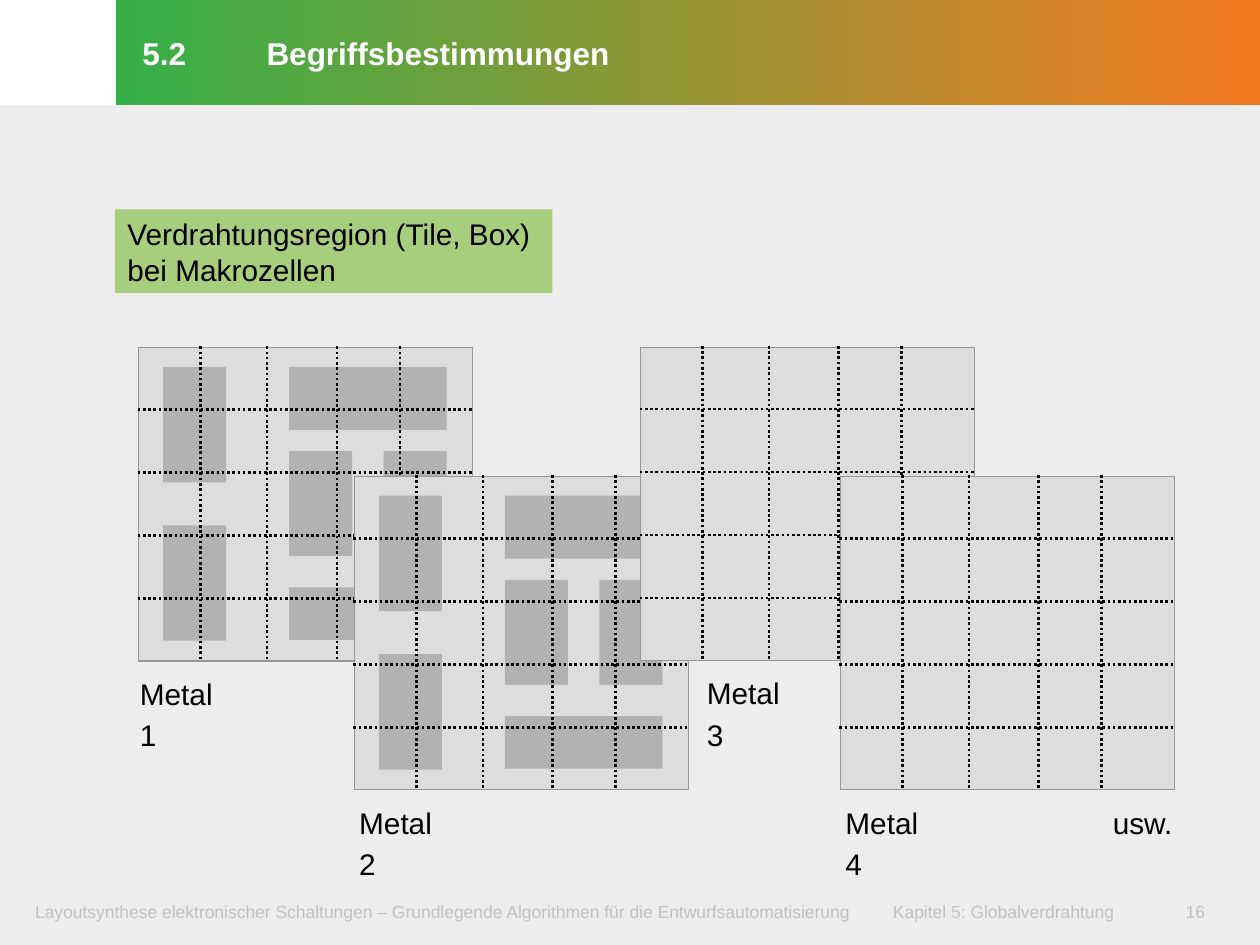
from lxml.etree import SubElement
from pptx import Presentation
from pptx.dml.color import RGBColor
from pptx.enum.dml import MSO_LINE
from pptx.enum.shapes import MSO_CONNECTOR, MSO_SHAPE
from pptx.enum.text import MSO_ANCHOR as Anchor, MSO_AUTO_SIZE as AutoSize, PP_ALIGN as Align
from pptx.oxml.ns import qn
from pptx.util import Pt

COLORS = {
    "page": "EDEDED", "footer": "C0C0C0", "white": "FFFFFF", "black": "000000",
    "title_start": "35B048", "title_end": "F47920", "topic": "A7CE7C",
    "panel": "DDDDDD", "panel_edge": "969696", "cell": "B2B2B2",
}
FONT = "Arial"
TITLE = "5.2\tBegriffsbestimmungen"
TOPIC = "Verdrahtungsregion (Tile, Box) bei Makrozellen"
FOOTERS = [  # text, left, width
    ("Layoutsynthese elektronischer Schaltungen – Grundlegende Algorithmen "
     "für die Entwurfsautomatisierung", 11.5, 490),
    ("Kapitel 5: Globalverdrahtung", 501.7, 150),
    ("16", 668.9, 42.5),
]
PANELS = [  # label, left, top, label offset, has macro cells
    ("Metal\v1", 79.2, 198.7, -14.4, True),
    ("Metal\v2", 202.5, 272.3, -12.4, True),
    ("Metal\v3", 366, 198.5, 22.8, False),
    ("Metal\v4", 480.2, 272.3, -12.2, False),
]
PANEL_WIDTH, PANEL_HEIGHT = 190.8, 179
CELLS = [  # left, top, width, height inside a panel
    (14, 11, 36, 66), (14, 101.5, 36, 66),
    (86, 11, 90, 36), (86, 59, 36, 60), (140, 59, 36, 60), (86, 137, 90, 30),
]
COLUMN_LINES = [35.5, 73.5, 113.3, 149.3]
ROW_LINES = [35.3 + 36 * row for row in range(4)]
LABEL_TOP = 180.7
LABEL_MARGINS = (15.1, 3.6, 7.2, 5)


def rgb(name):
    return RGBColor.from_string(COLORS[name])


def add_box(shapes, left, top, width, height, fill, edge=None):
    box = shapes.add_shape(MSO_SHAPE.RECTANGLE, Pt(left), Pt(top), Pt(width), Pt(height))
    box.shadow.inherit = False
    box.fill.solid()
    box.fill.fore_color.rgb = rgb(fill)
    if edge:
        box.line.color.rgb = rgb(edge)
        box.line.width = Pt(0.75)
    else:
        box.line.fill.background()
    return box


def write(shape, text, size, color, margins, spacing=None, bold=False, anchor=Anchor.TOP):
    """Set and format the text; margins are left, top, right, bottom."""
    frame = shape.text_frame
    frame.text = text
    frame.word_wrap = True
    frame.auto_size = AutoSize.NONE
    frame.vertical_anchor = anchor
    (frame.margin_left, frame.margin_top,
     frame.margin_right, frame.margin_bottom) = map(Pt, margins)
    paragraph = frame.paragraphs[0]
    paragraph.alignment = Align.LEFT
    if spacing:
        paragraph.line_spacing = Pt(spacing)
    for run in paragraph.runs:
        run.font.name = FONT
        run.font.size = Pt(size)
        run.font.bold = bold
        run.font.color.rgb = rgb(color)
    return paragraph


def add_label(shapes, text, left, top, width):
    label = shapes.add_textbox(Pt(left), Pt(top), Pt(width), Pt(32.4))
    write(label, text, 17, "black", LABEL_MARGINS, 23.5)


def add_grid_line(shapes, x1, y1, x2, y2):
    line = shapes.add_connector(MSO_CONNECTOR.STRAIGHT, Pt(x1), Pt(y1), Pt(x2), Pt(y2))
    line.line.color.rgb = rgb("black")
    line.line.width = Pt(1.5)
    line.line.dash_style = MSO_LINE.ROUND_DOT
    SubElement(line._element.spPr, qn("a:effectLst"))


def add_panel(slide, label, left, top, label_offset, has_cells):
    shapes = slide.shapes.add_group_shape().shapes
    add_box(shapes, left, top, PANEL_WIDTH, PANEL_HEIGHT, "panel", "panel_edge")
    for x, y, width, height in CELLS if has_cells else []:
        add_box(shapes, left + x, top + y, width, height, "cell")
    for y in ROW_LINES:
        add_grid_line(shapes, left - 0.5, top + y, left + PANEL_WIDTH + 0.5, top + y)
    for x in COLUMN_LINES:
        add_grid_line(shapes, left + x, top - 0.8, left + x, top + PANEL_HEIGHT)
    add_label(shapes, label, left + label_offset, top + LABEL_TOP, 73.4)


def format_title(title):
    title.left, title.top, title.width, title.height = Pt(66.2), Pt(0), Pt(653.8), Pt(60)
    title.fill.gradient()
    title.fill.gradient_angle = 0
    for stop, name in zip(title.fill.gradient_stops, ("title_start", "title_end")):
        stop.color.rgb = rgb(name)
    for stop, position in zip(title.fill.gradient_stops, (0, 1)):
        stop.position = position
    paragraph = write(title, TITLE, 18, "white", LABEL_MARGINS, 23.5, True, Anchor.MIDDLE)
    tabs = SubElement(paragraph._p.get_or_add_pPr(), qn("a:tabLst"))
    SubElement(tabs, qn("a:tab"), pos=str(Pt(71)), algn="l")


def main():
    presentation = Presentation()
    presentation.slide_width, presentation.slide_height = Pt(720), Pt(540)
    slide = presentation.slides.add_slide(presentation.slide_layouts[5])
    shapes = slide.shapes
    format_title(shapes.title)
    add_box(shapes, 0, 60, 720, 480, "page")
    for text, left, width in FOOTERS:
        footer = shapes.add_textbox(Pt(left), Pt(510.5), Pt(width), Pt(23))
        write(footer, text, 10, "footer", (8.6, 4.3, 8.6, 4.3))
    topic = add_box(shapes, 65.7, 119.7, 250, 47.7, "topic")
    write(topic, TOPIC, 17, "black", (7.2, 3.6, 7.2, 3.6), 20.5, anchor=Anchor.MIDDLE)
    for panel in PANELS:
        add_panel(slide, *panel)
    add_label(shapes, "usw.", 620.8, 453, 60)
    presentation.save("out.pptx")


if __name__ == "__main__":
    main()
